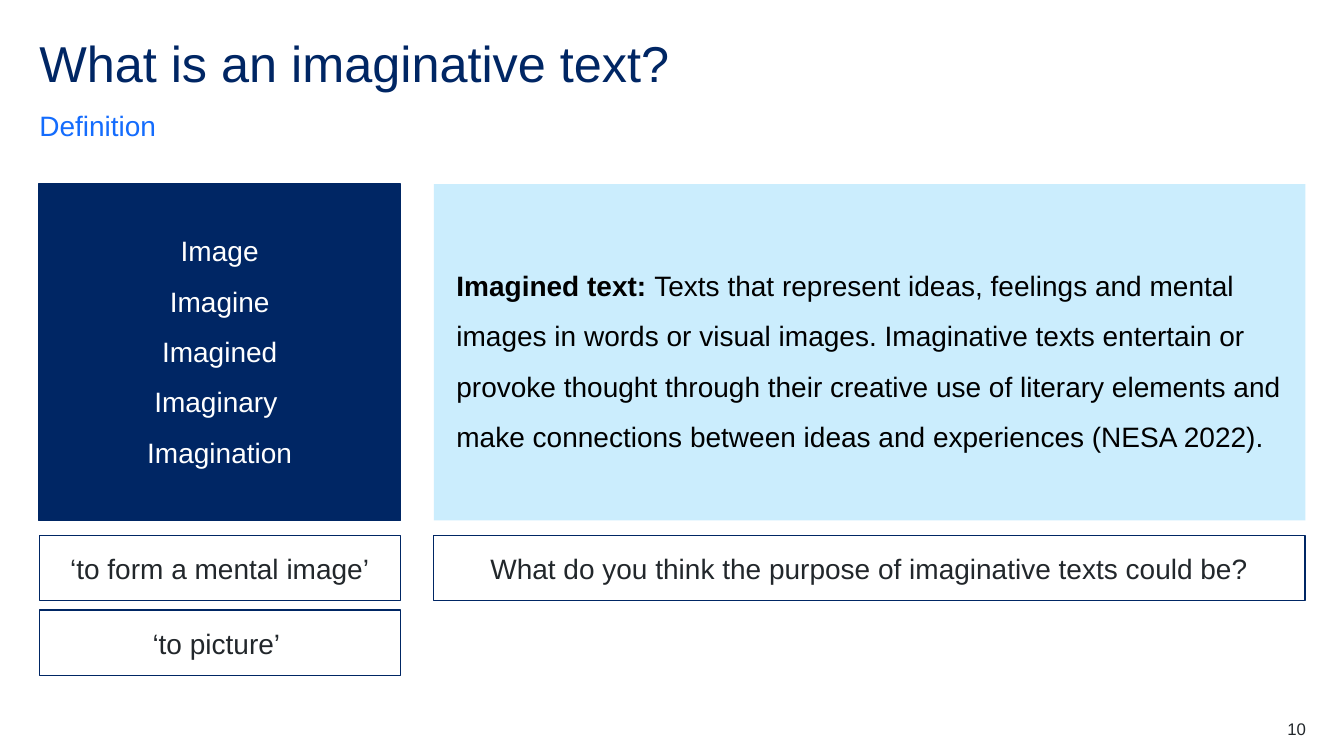
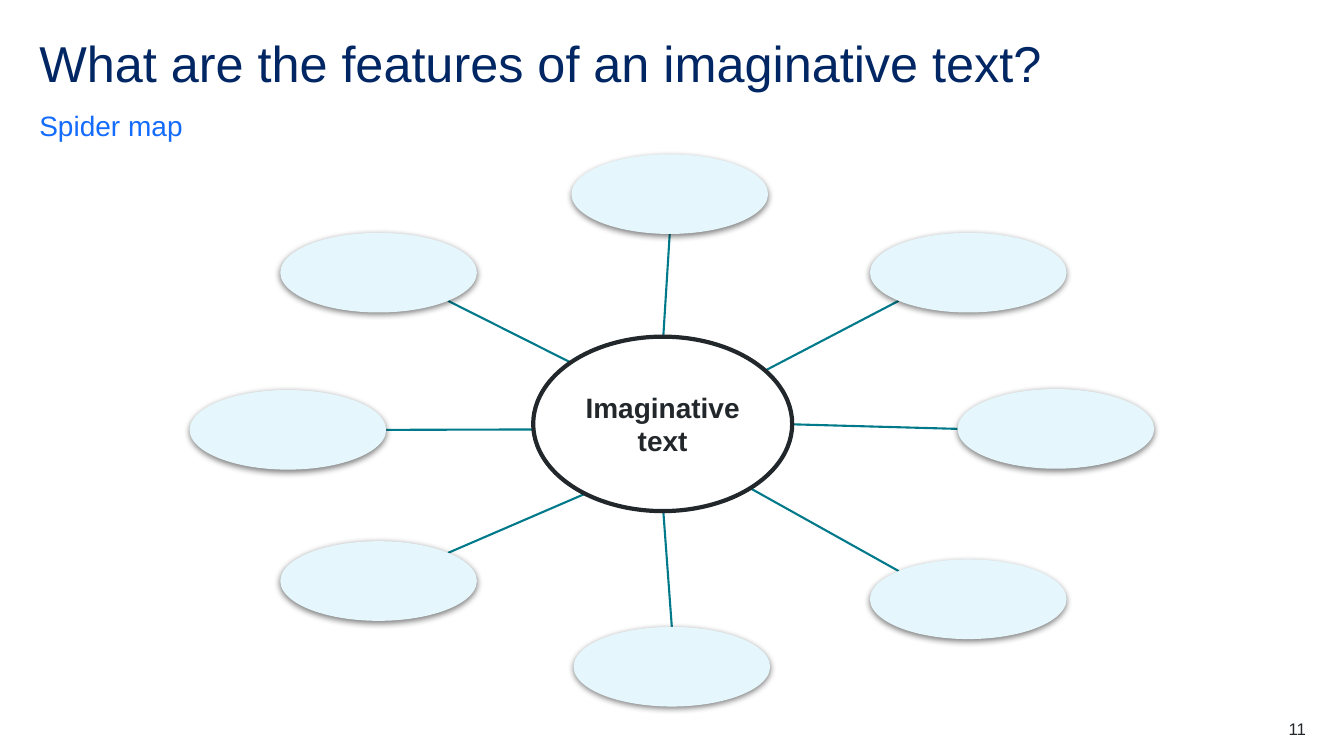
from math import cos, radians, sin

from lxml import etree
from pptx import Presentation
from pptx.dml.color import RGBColor
from pptx.enum.shapes import MSO_CONNECTOR, MSO_SHAPE
from pptx.enum.text import MSO_ANCHOR, PP_ALIGN
from pptx.oxml import parse_xml
from pptx.oxml.ns import nsdecls, qn
from pptx.util import Pt

RECTANGLE, OVAL = MSO_SHAPE.RECTANGLE, MSO_SHAPE.OVAL
STRAIGHT = MSO_CONNECTOR.STRAIGHT
TOP, MIDDLE, BOTTOM = MSO_ANCHOR.TOP, MSO_ANCHOR.MIDDLE, MSO_ANCHOR.BOTTOM
LEFT, CENTER, RIGHT = PP_ALIGN.LEFT, PP_ALIGN.CENTER, PP_ALIGN.RIGHT

NAVY = RGBColor(0x00, 0x26, 0x64)
BLUE = RGBColor(0x14, 0x6C, 0xFD)
SKY = RGBColor(0xCB, 0xED, 0xFD)
ICE = RGBColor(0xE5, 0xF7, 0xFC)
TEAL = RGBColor(0x00, 0x7A, 0x8A)
INK = RGBColor(0x22, 0x27, 0x2B)
BLACK = RGBColor(0x00, 0x00, 0x00)
WHITE = RGBColor(0xFF, 0xFF, 0xFF)

FONT = "Arial"
BODY_SIZE = 20
FIRST_PAGE = 10
NO_INSETS = (0, 0, 0, 0)
BOX_INSETS = (7.2, 3.6, 7.2, 3.6)

MARGIN = 28.1
CONTENT_WIDTH = 904.3
LEFT_WIDTH = 257.8
RIGHT_COLUMN, RIGHT_WIDTH = 310, 622.4
PANEL_TOP, PANEL_HEIGHT = 131.5, 240.3
BOX_TOP, BOX_HEIGHT, BOX_PITCH = 382.3, 46.8, 53.5

WORDS = ["Image", "Imagine", "Imagined", "Imaginary ", "Imagination"]
MEANINGS = ["‘to form a mental image’", "‘to picture’ "]
TERM = "Imagined text: "
DEFINITION = (
    "Texts that represent ideas, feelings and mental images in words or visual images. "
    "Imaginative texts entertain or provoke thought through their creative use of literary "
    "elements and make connections between ideas and experiences (NESA 2022)."
)
QUESTION = "What do you think the purpose of imaginative texts could be?"

HUB_TEXT = "Imaginative text"
HUB = (380.9, 240.5, 185, 124.6)
LEAF_WIDTH, LEAF_HEIGHT = 140.4, 56.9
LEAVES = [
    ((135.4, 278.6), (407.5, 306.7)),
    ((200.2, 166.3), (408.2, 259.2)),
    ((408.2, 110.2), (473.8, 240.5)),
    ((621.4, 166.3), (536.4, 270)),
    ((684, 277.9), (565.9, 303.1)),
    ((621.4, 399.6), (532.8, 347)),
    ((409.7, 447.8), (473.8, 365)),
    ((200.2, 386.6), (427.7, 348.5)),
]


def points(values):
    return [Pt(value) for value in values]


def write(shape, lines, color, size=BODY_SIZE, align=LEFT, anchor=TOP,
          insets=NO_INSETS, spacing=1.0, bold=False, lead=""):
    frame = shape.text_frame
    frame.word_wrap = True
    frame.vertical_anchor = anchor
    (frame.margin_left, frame.margin_top,
     frame.margin_right, frame.margin_bottom) = points(insets)
    frame.text = "\n".join(lines)
    for paragraph in frame.paragraphs:
        paragraph.alignment = align
        paragraph.line_spacing = spacing
        for run in paragraph.runs:
            run.font.name = FONT
            run.font.size = Pt(size)
            run.font.bold = bold
            run.font.color.rgb = color
    if lead:
        first_run = frame.paragraphs[0].runs[0]
        body = first_run.text
        first_run.text = lead
        first_run.font.bold = True
        body_run = frame.paragraphs[0].add_run()
        body_run.text = body
        body_run.font.name = FONT
        body_run.font.size = Pt(size)
        body_run.font.color.rgb = color


def add_label(slide, bounds, text, color, size, **style):
    write(slide.shapes.add_textbox(*points(bounds)), [text], color, size, **style)


def add_figure(slide, kind, bounds, fill=None, line=None, line_width=1):
    shape = slide.shapes.add_shape(kind, *points(bounds))
    shape.shadow.inherit = False
    if fill is None:
        shape.fill.background()
    else:
        shape.fill.solid()
        shape.fill.fore_color.rgb = fill
    if line is None:
        shape.line.fill.background()
    else:
        shape.line.color.rgb = line
        shape.line.width = Pt(line_width)
    return shape


def add_outlined_box(slide, left, top, width, text):
    box = add_figure(slide, RECTANGLE, (left, top, width, BOX_HEIGHT), line=NAVY)
    write(box, [text], INK, align=CENTER, anchor=MIDDLE, insets=BOX_INSETS)


def add_soft_shadow(shape):
    effects = shape._element.spPr.find(qn("a:effectLst"))
    effects.append(parse_xml(
        f'<a:outerShdw {nsdecls("a")} blurRad="{Pt(4.5)}" dist="{Pt(1.5)}" '
        'dir="5400000" algn="t" rotWithShape="0">'
        '<a:srgbClr val="000000"><a:alpha val="50000"/></a:srgbClr></a:outerShdw>'))


def add_spoke(slide, start, end):
    spoke = slide.shapes.add_connector(STRAIGHT, *points(start + end))
    spoke.line.color.rgb = TEAL
    spoke.line.width = Pt(1.5)
    etree.SubElement(spoke._element.spPr, qn("a:effectLst"))


def add_page(presentation, number, title, subtitle):
    slide = presentation.slides.add_slide(presentation.slide_layouts[6])
    add_label(slide, (MARGIN, 28.1, CONTENT_WIDTH, 43.2), title, NAVY, 36, spacing=0.9)
    add_label(slide, (MARGIN, 77, CONTENT_WIDTH, 24.5), subtitle, BLUE, BODY_SIZE,
              anchor=BOTTOM, spacing=1.5)
    add_label(slide, (876.2, 513.4, 56.6, 14.4), str(number), INK, 12, align=RIGHT)
    return slide


def draw_definition(slide):
    word_panel = add_figure(slide, RECTANGLE,
                            (MARGIN - 0.4, PANEL_TOP, LEFT_WIDTH + 0.7, PANEL_HEIGHT), NAVY, NAVY)
    write(word_panel, WORDS, WHITE, align=CENTER, anchor=MIDDLE,
          insets=(7.2, 3.6, 7.2, 17), spacing=1.5)
    for index, meaning in enumerate(MEANINGS):
        add_outlined_box(slide, MARGIN, BOX_TOP + index * BOX_PITCH, LEFT_WIDTH, meaning)
    definition_panel = add_figure(
        slide, RECTANGLE, (RIGHT_COLUMN, PANEL_TOP, RIGHT_WIDTH, PANEL_HEIGHT), SKY)
    write(definition_panel, [DEFINITION], BLACK, anchor=MIDDLE,
          insets=(16, 0, 15, 0), spacing=1.5, lead=TERM)
    add_outlined_box(slide, RIGHT_COLUMN - 0.3, BOX_TOP, RIGHT_WIDTH, QUESTION)


def draw_spider_map(slide):
    for index, ((left, top), hub_end) in enumerate(LEAVES):
        angle = radians(index * 360 / len(LEAVES))
        leaf_end = (left + LEAF_WIDTH / 2 * (1 + cos(angle)),
                    top + LEAF_HEIGHT / 2 * (1 + sin(angle)))
        add_spoke(slide, hub_end, leaf_end)
    hub = add_figure(slide, OVAL, HUB, WHITE, INK, 3)
    write(hub, [HUB_TEXT], INK, align=CENTER, anchor=MIDDLE,
          insets=(6.5, 3, 6.5, 3), bold=True)
    for (left, top), _ in LEAVES:
        add_soft_shadow(add_figure(slide, OVAL, (left, top, LEAF_WIDTH, LEAF_HEIGHT), ICE))


PAGES = [
    ("What is an imaginative text?", "Definition", draw_definition),
    ("What are the features of an imaginative text?", "Spider map", draw_spider_map),
]


def main():
    presentation = Presentation()
    presentation.slide_width, presentation.slide_height = Pt(960), Pt(540)
    for number, (title, subtitle, draw) in enumerate(PAGES, FIRST_PAGE):
        draw(add_page(presentation, number, title, subtitle))
    presentation.save("out.pptx")


if __name__ == "__main__":
    main()
